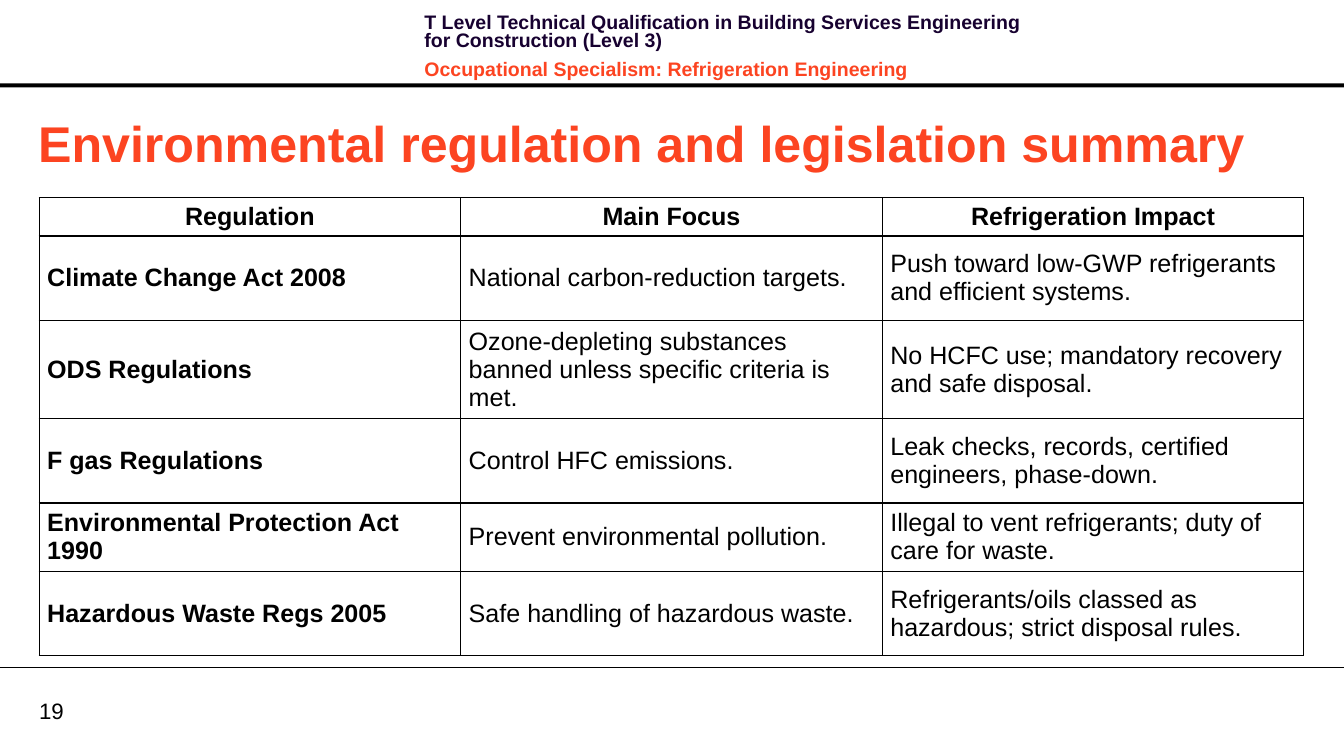
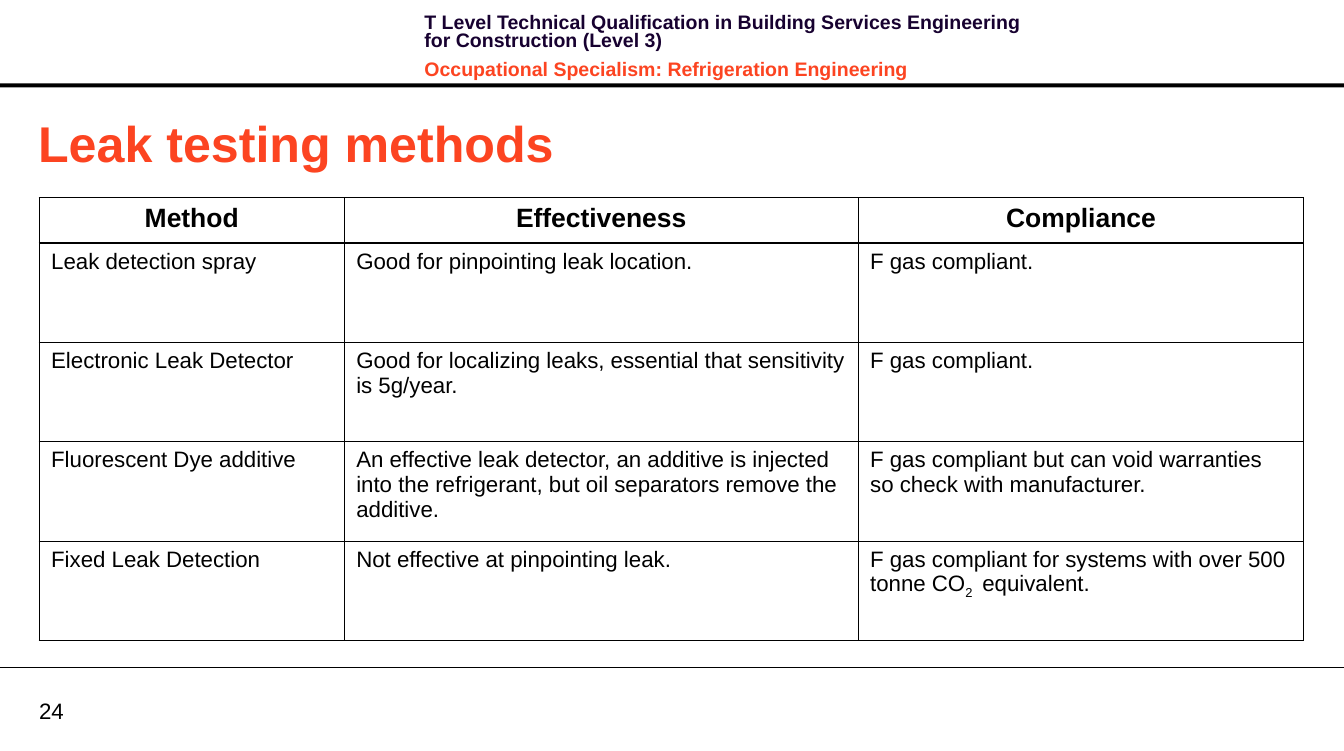
from dataclasses import dataclass
from itertools import product

from lxml import etree
from pptx import Presentation
from pptx import util as u
from pptx.dml.color import RGBColor
from pptx.enum import shapes, text
from pptx.oxml import ns

WIDTH, HEIGHT = 13.39, 7.48
MARGIN, TABLE_TOP = 0.39, 1.97


@dataclass(frozen=True)
class Theme:
    font: str = "Arial"
    accent: str = "FC4421"
    navy: str = "170130"
    black: str = "000000"
    white: str = "FFFFFF"
    title_size: int = 36
    header_size: int = 14
    page_size: int = 16
    header_leading: float = 13.1


@dataclass(frozen=True)
class TableStyle:
    head_size: int
    body_size: int
    inset_x: float
    inset_y: float
    anchor: text.MSO_ANCHOR
    bold_first_column: bool = False


class Deck:
    def __init__(self, theme):
        self.theme = theme
        self.presentation = Presentation()
        self.presentation.slide_width = u.Inches(WIDTH)
        self.presentation.slide_height = u.Inches(HEIGHT)
        self.slide = None

    def add_run(self, paragraph, wording, size, color, bold=False):
        run = paragraph.add_run()
        run.text = wording
        run.font.name = self.theme.font
        run.font.size = u.Pt(size)
        run.font.bold = bold
        run.font.color.rgb = RGBColor.from_string(color)
        return run

    def add_slide(self, title, page):
        layout = self.presentation.slide_layouts[5]
        self.slide = self.presentation.slides.add_slide(layout)
        self.add_header()
        self.add_footer(page)
        self.add_title(title)

    def add_title(self, wording):
        shape = self.slide.shapes.title
        shape.left, shape.top = u.Inches(0.28), u.Inches(1.06)
        shape.width, shape.height = u.Inches(12.72), u.Inches(0.71)
        frame = shape.text_frame
        frame.word_wrap = True
        frame.auto_size = text.MSO_AUTO_SIZE.NONE
        frame.vertical_anchor = text.MSO_ANCHOR.MIDDLE
        paragraph = frame.paragraphs[0]
        paragraph.alignment = text.PP_ALIGN.LEFT
        self.add_run(paragraph, wording, self.theme.title_size, self.theme.accent, True)

    def add_text_box(self, left, top, width, height):
        box = self.slide.shapes.add_textbox(
            u.Inches(left), u.Inches(top), u.Inches(width), u.Inches(height))
        box.text_frame.word_wrap = True
        return box.text_frame

    def add_header(self):
        theme = self.theme
        band = self.slide.shapes.add_shape(
            shapes.MSO_SHAPE.RECTANGLE,
            0, u.Inches(0.83), u.Inches(WIDTH), u.Inches(0.04))
        band.shadow.inherit = False
        band.fill.solid()
        band.fill.fore_color.rgb = RGBColor.from_string(theme.black)
        band.line.fill.background()

        frame = self.add_text_box(4.13, 0.1, 6.23, 0.64)
        qualification = frame.paragraphs[0]
        specialism = frame.add_paragraph()
        specialism.space_before = u.Pt(4)
        for paragraph, wording, color in (
            (qualification, "T Level Technical Qualification in Building Services "
                            "Engineering for Construction (Level 3)", theme.navy),
            (specialism, "Occupational Specialism: Refrigeration Engineering", theme.accent),
        ):
            paragraph.line_spacing = u.Pt(theme.header_leading)
            paragraph.space_after = u.Pt(4)
            self.add_run(paragraph, wording, theme.header_size, color, True)

    def add_footer(self, page):
        rule = self.slide.shapes.add_connector(
            shapes.MSO_CONNECTOR.STRAIGHT,
            0, u.Inches(6.65), u.Inches(WIDTH), u.Inches(6.65))
        rule.line.color.rgb = RGBColor.from_string(self.theme.black)
        rule.line.width = u.Pt(0.75)
        etree.SubElement(rule._element.spPr, ns.qn("a:effectLst"))

        frame = self.add_text_box(MARGIN, 6.94, 0.64, 0.27)
        frame.margin_left = frame.margin_right = 0
        frame.margin_top = frame.margin_bottom = 0
        frame.vertical_anchor = text.MSO_ANCHOR.MIDDLE
        self.add_run(frame.paragraphs[0], str(page), self.theme.page_size, self.theme.black)

    def add_borders(self, cell):
        properties = cell._tc.get_or_add_tcPr()
        for index, side in enumerate(("lnL", "lnR", "lnT", "lnB")):
            line = etree.Element(ns.qn(f"a:{side}"), w=str(u.Pt(1)))
            fill = etree.SubElement(line, ns.qn("a:solidFill"))
            etree.SubElement(fill, ns.qn("a:srgbClr"), val=self.theme.black)
            properties.insert(index, line)

    def fill_cell(self, cell, content, style, heading, bold):
        cell.fill.solid()
        cell.fill.fore_color.rgb = RGBColor.from_string(self.theme.white)
        self.add_borders(cell)
        cell.margin_left = cell.margin_right = u.Inches(style.inset_x)
        cell.margin_top = cell.margin_bottom = u.Inches(style.inset_y)
        cell.vertical_anchor = style.anchor
        paragraph = cell.text_frame.paragraphs[0]
        paragraph.alignment = text.PP_ALIGN.CENTER if heading else text.PP_ALIGN.LEFT
        size = style.head_size if heading else style.body_size
        pieces = (content,) if isinstance(content, str) else content
        for index, piece in enumerate(pieces):
            run = self.add_run(paragraph, piece, size, self.theme.black, bold)
            if index % 2:
                run._r.get_or_add_rPr().set("baseline", "-25000")

    def add_table(self, rows, widths, heights, style):
        table = self.slide.shapes.add_table(
            len(rows), len(widths), u.Inches(MARGIN), u.Inches(TABLE_TOP),
            u.Inches(sum(widths)), u.Inches(sum(heights))).table
        table.horz_banding = False
        for column, width in zip(table.columns, widths):
            column.width = u.Inches(width)
        for row, height in zip(table.rows, heights):
            row.height = u.Inches(height)
        for row, column in product(range(len(rows)), range(len(widths))):
            heading = row == 0
            bold = heading or (style.bold_first_column and column == 0)
            self.fill_cell(table.cell(row, column), rows[row][column], style, heading, bold)


REGULATIONS = (
    ("Regulation", "Main Focus", "Refrigeration Impact"),
    ("Climate Change Act 2008", "National carbon‑reduction targets.",
     "Push toward low‑GWP refrigerants and efficient systems."),
    ("ODS Regulations",
     "Ozone‑depleting substances banned unless specific criteria is met.",
     "No HCFC use; mandatory recovery and safe disposal."),
    ("F gas Regulations", "Control HFC emissions.",
     "Leak checks, records, certified engineers, phase‑down."),
    ("Environmental Protection Act 1990", "Prevent environmental pollution.",
     "Illegal to vent refrigerants; duty of care for waste."),
    ("Hazardous Waste Regs 2005", "Safe handling of hazardous waste.",
     "Refrigerants/oils classed as hazardous; strict disposal rules."),
)

LEAK_METHODS = (
    ("Method", "Effectiveness", "Compliance"),
    ("Leak detection spray", "Good for pinpointing leak location.", "F gas compliant."),
    ("Electronic Leak Detector",
     "Good for localizing leaks, essential that sensitivity is 5g/year.",
     "F gas compliant."),
    ("Fluorescent Dye additive",
     "An effective leak detector, an additive is injected into the refrigerant, "
     "but oil separators remove the additive.",
     "F gas compliant but can void warranties so check with manufacturer."),
    ("Fixed Leak Detection", "Not effective at pinpointing leak.",
     ("F gas compliant for systems with over 500 tonne CO", "2 ", " equivalent.")),
)


def main():
    deck = Deck(Theme())

    deck.add_slide("Environmental regulation and legislation summary", 19)
    deck.add_table(
        REGULATIONS, [4.2] * 3, [0.34, 0.84, 0.59, 0.84, 0.59, 0.84],
        TableStyle(18, 18, 0.08, 0.04, text.MSO_ANCHOR.MIDDLE, bold_first_column=True))

    deck.add_slide("Leak testing methods", 24)
    deck.add_table(
        LEAK_METHODS, [3.04, 5.12, 4.44], [0.45] + [0.99] * 4,
        TableStyle(19, 16, 0.12, 0.06, text.MSO_ANCHOR.TOP))

    deck.presentation.save("out.pptx")


if __name__ == "__main__":
    main()
